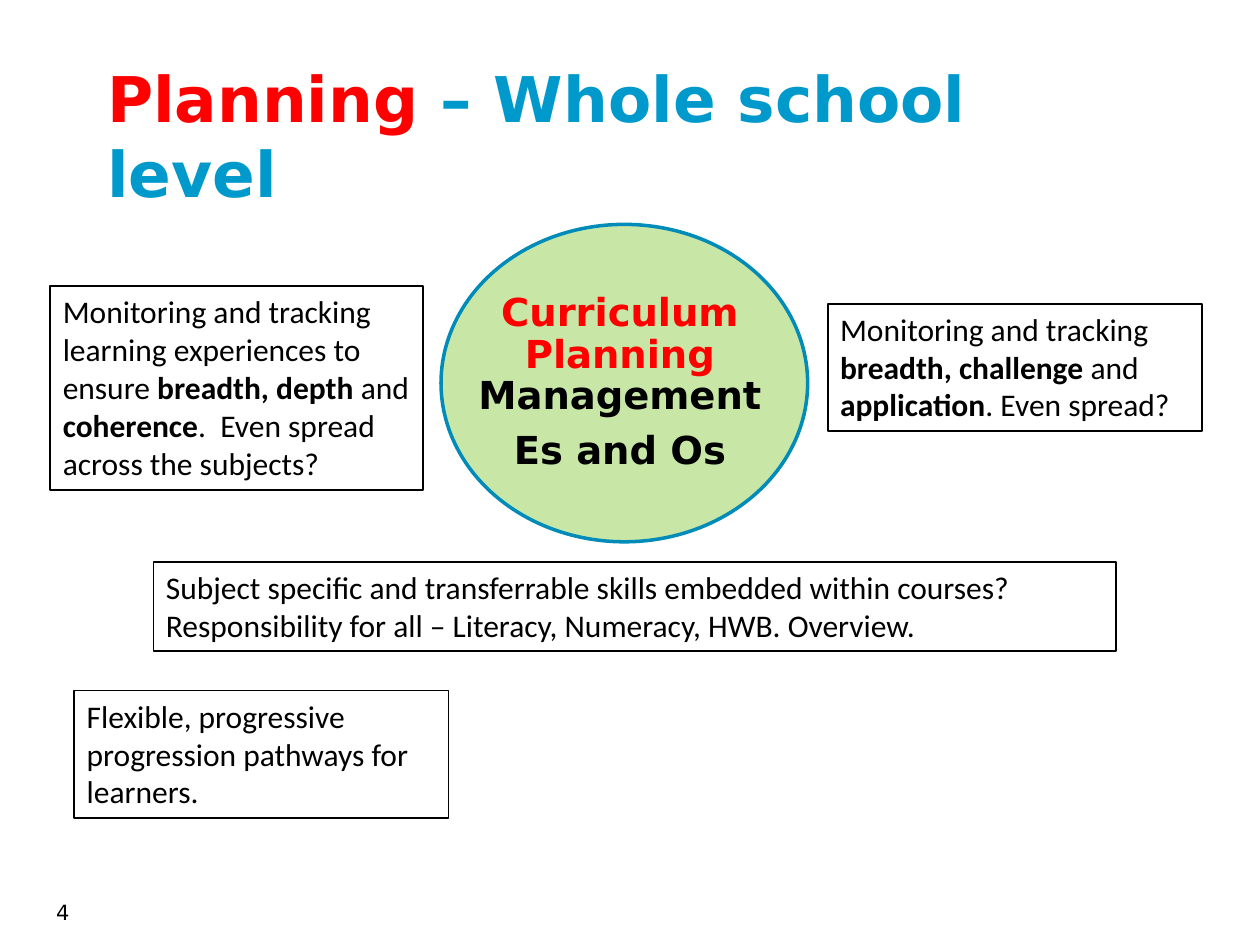
"""Build the slide on curriculum planning at whole school level."""
import pptx
import pptx.dml.color
import pptx.enum.shapes
import pptx.enum.text
import pptx.oxml
import pptx.oxml.ns
import pptx.util

Pt = pptx.util.Pt
ALIGN = pptx.enum.text.PP_ALIGN
ANCHOR = pptx.enum.text.MSO_ANCHOR
AUTO_SIZE = pptx.enum.text.MSO_AUTO_SIZE
SHAPE = pptx.enum.shapes.MSO_SHAPE

COLOURS = {
    "text": "000000",
    "accent": "FF0000",
    "title": "0099CC",
    "circle": "92D050",
    "circle_edge": "008BB9",
}
HEADING_FONT = "DejaVu Sans"
BODY_FONT = "Calibri"

QUESTIONS = [
    ((28.8, 163.5, 213.1, 116.6),
     [("Monitoring and tracking learning experiences to ensure ", {}),
      ("breadth, depth ", {"bold": True}), ("and ", {}),
      ("coherence", {"bold": True}),
      (".  Even spread across the subjects?", {})]),
    ((473, 173.5, 213.8, 72.7),
     [("Monitoring and tracking ", {}),
      ("breadth, challenge ", {"bold": True}), ("and ", {}),
      ("application", {"bold": True}), (". Even spread?", {})]),
    ((87.8, 321.1, 550.1, 51.1),
     [("Subject specific and transferrable skills embedded within courses? "
       "Responsibility for all – Literacy, Numeracy, HWB. Overview.", {})]),
    ((42.5, 394.6, 213.8, 72.7),
     [("Flexible, progressive progression pathways for learners.", {})]),
]


def rgb(name):
    """Return the named colour."""
    return pptx.dml.color.RGBColor.from_string(COLOURS[name])


def write(paragraph, text, size=18, font=BODY_FONT, colour="text", bold=False):
    """Add one formatted run to a paragraph."""
    run = paragraph.add_run()
    run.text = text
    run.font.size = Pt(size)
    run.font.name = font
    run.font.bold = bold
    run.font.color.rgb = rgb(colour)


def add_title(slide):
    """Place and fill the title."""
    title = slide.shapes.title
    title.left, title.top, title.width, title.height = map(Pt, (54, 37.4, 612, 79.2))
    frame = title.text_frame
    frame.auto_size = AUTO_SIZE.NONE
    frame.vertical_anchor = ANCHOR.MIDDLE
    heading = frame.paragraphs[0]
    heading.alignment = ALIGN.LEFT
    write(heading, "Planning", size=36, font=HEADING_FONT, colour="accent", bold=True)
    write(heading, " – Whole school level", size=36, font=HEADING_FONT,
          colour="title", bold=True)


def add_question(slide, bounds, phrases):
    """Add an outlined box with its phrases."""
    question = slide.shapes.add_shape(SHAPE.RECTANGLE, *map(Pt, bounds))
    question.shadow.inherit = False
    question.fill.background()
    question.line.color.rgb = rgb("text")
    question.line.width = Pt(1)
    frame = question.text_frame
    frame.word_wrap = True
    frame.auto_size = AUTO_SIZE.SHAPE_TO_FIT_TEXT
    frame.vertical_anchor = ANCHOR.TOP
    paragraph = frame.paragraphs[0]
    paragraph.alignment = ALIGN.LEFT
    for text, style in phrases:
        write(paragraph, text, **style)


def add_centre(slide):
    """Add the translucent circle grouped with its label."""
    group = slide.shapes.add_group_shape()
    circle = group.shapes.add_shape(SHAPE.OVAL, *map(Pt, (252, 128.2, 209.5, 181.4)))
    circle.shadow.inherit = False
    circle.fill.solid()
    circle.fill.fore_color.rgb = rgb("circle")
    fill_colour = circle.fill._xPr.find(".//" + pptx.oxml.ns.qn("a:srgbClr"))
    alpha = pptx.oxml.parse_xml(
        f'<a:alpha {pptx.oxml.ns.nsdecls("a")} val="50000"/>')
    fill_colour.append(alpha)
    circle.line.color.rgb = rgb("circle_edge")
    circle.line.width = Pt(2)

    label = group.shapes.add_textbox(*map(Pt, (269.3, 154.8, 169.9, 128.2)))
    frame = label.text_frame
    frame.word_wrap = True
    frame.vertical_anchor = ANCHOR.MIDDLE
    frame.margin_left = frame.margin_right = Pt(2.2)
    frame.margin_top = frame.margin_bottom = Pt(2.2)
    topic, outcomes = frame.paragraphs[0], frame.add_paragraph()
    for paragraph in (topic, outcomes):
        paragraph.alignment = ALIGN.CENTER
        paragraph.line_spacing = 0.9
        paragraph.space_after = Pt(7.7)
    style = {"size": 22, "font": HEADING_FONT, "bold": True}
    write(topic, "Curriculum Planning ", colour="accent", **style)
    write(topic, "Management", **style)
    write(outcomes, "Es and Os", **style)


def add_page_number(slide, number):
    """Add the page number at the lower left."""
    footer = slide.shapes.add_textbox(*map(Pt, (-8.6, 510.5, 55.4, 37.4)))
    footer.text_frame.word_wrap = True
    paragraph = footer.text_frame.paragraphs[0]
    paragraph.alignment = ALIGN.RIGHT
    write(paragraph, number, size=12, font=HEADING_FONT)


def main():
    """Build and save the presentation."""
    presentation = pptx.Presentation()
    presentation.slide_width, presentation.slide_height = Pt(720), Pt(540)
    slide = presentation.slides.add_slide(presentation.slide_layouts[5])
    add_page_number(slide, "4")
    add_title(slide)
    add_centre(slide)
    for bounds, phrases in QUESTIONS:
        add_question(slide, bounds, phrases)
    presentation.save("out.pptx")


if __name__ == "__main__":
    main()
